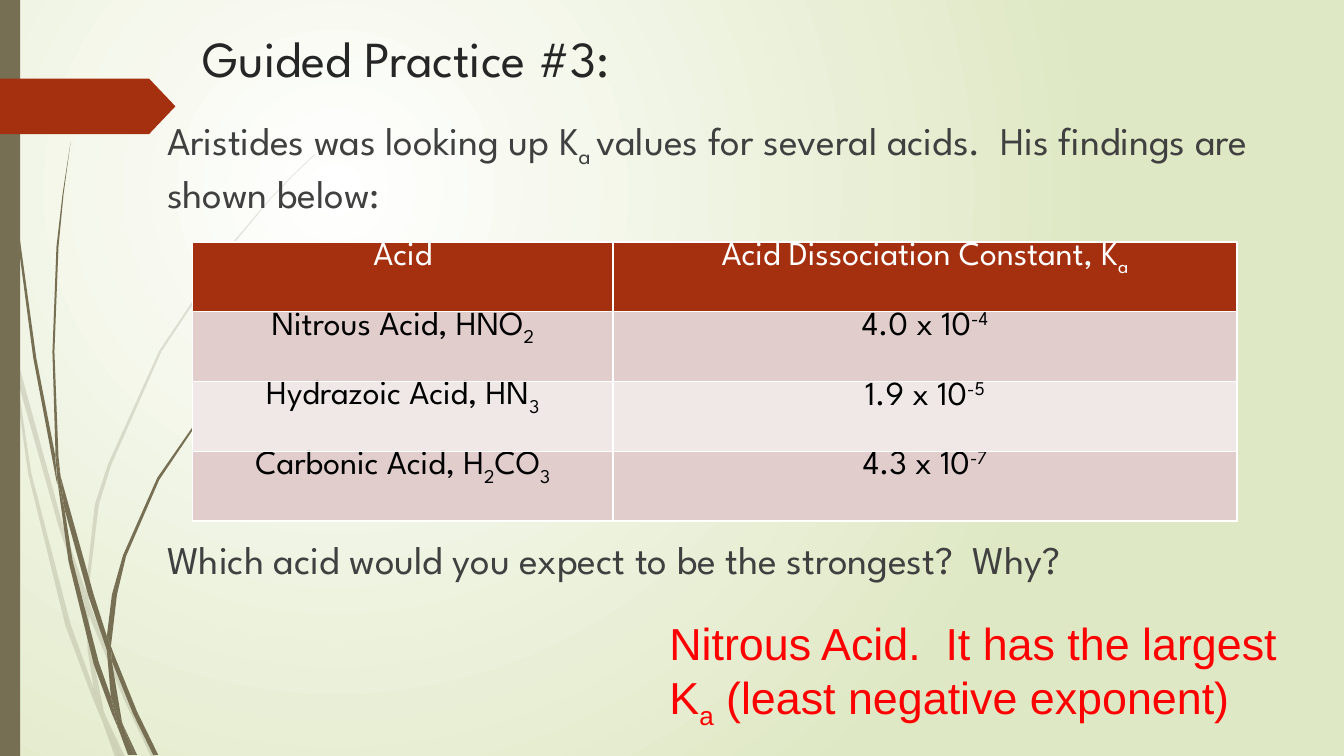
from lxml.etree import SubElement
from pptx import Presentation
from pptx.dml.color import RGBColor
from pptx.enum.shapes import MSO_SHAPE as Preset
from pptx.enum.text import MSO_ANCHOR as Anchor, PP_ALIGN as Align
from pptx.oxml.ns import qn
from pptx.util import Inches, Pt

WHITE = RGBColor(0xFF, 0xFF, 0xFF)
BLACK = RGBColor(0, 0, 0)
RED = RGBColor(0xFF, 0, 0)
PALE_GREEN = RGBColor(0xDF, 0xE8, 0xC4)
OLIVE = RGBColor(0x76, 0x6F, 0x54)
RUST = RGBColor(0xA5, 0x30, 0x10)
TITLE_INK = RGBColor(0x26, 0x26, 0x26)
BODY_INK = RGBColor(0x40, 0x40, 0x40)
ROW_FILLS = (RGBColor(0xF0, 0xE8, 0xE7), RGBColor(0xE1, 0xCD, 0xCC))

SPARTAN = "League Spartan"
SUB, SUPER = -25000, 30000

FAINT_STRANDS = (
    ((0.11, 3.5), (0.09, 3.22), (0, 2.82), (0, 2.99), (0.1, 3.44)),
    ((0.58, 5.22), (0.84, 5.99), (0.85, 5.86), (0.62, 5.2), (0.14, 3.45), (0.17, 3.76)),
    ((0.92, 6.07), (0.88, 5.96), (0.88, 6.1), (1.23, 6.94), (1.5, 7.51), (1.55, 7.51),
     (1.27, 6.92)),
    ((1.19, 7.51), (1.24, 7.51), (1.05, 7.11)),
    ((0.93, 6.83), (0.7, 6.19), (0.31, 4.69), (0.17, 3.76), (0.11, 3.5), (0.28, 4.7),
     (0.65, 6.21), (0.92, 6.93), (1.01, 7.14), (0.99, 7.07)),
    ((0.84, 5.99), (0.87, 6.46), (0.93, 6.83), (0.96, 6.92), (1.05, 7.11), (1.03, 7.06),
     (0.91, 6.46), (0.88, 6.1), (0.88, 6.08)),
    ((0.88, 5.84), (0.98, 5.01), (1.1, 4.62), (1.6, 3.49), (2.29, 2.45), (2.68, 1.98),
     (2.9, 1.75), (3.12, 1.54), (3.12, 1.53), (2.89, 1.75), (2.68, 1.97), (2.28, 2.44),
     (1.58, 3.48), (1.07, 4.61), (0.94, 5.01), (0.85, 5.84), (0.85, 5.86), (0.88, 5.96)),
    ((1.01, 7.14), (1.14, 7.51), (1.19, 7.51)),
    ((0.88, 6.08), (0.88, 5.96), (0.85, 5.86), (0.84, 5.99)),
    ((0.96, 6.92), (0.93, 6.83), (0.99, 7.07), (1.01, 7.14), (1.19, 7.51), (1.05, 7.11)),
)
DARK_STRANDS = (
    ((0.07, 1.1), (0.17, 2.33), (0.33, 3.55), (0.56, 4.77), (0.57, 4.81), (0.55, 4.57),
     (0.55, 4.53), (0.36, 3.55), (0.19, 2.32), (0.08, 1.09), (0.05, 0.48), (0.04, 0),
     (0.03, 0), (0.04, 0.48)),
    ((0.88, 5.92), (1.06, 6.45), (1.06, 6.31), (0.93, 5.9), (0.6, 4.72), (0.64, 5.05)),
    ((1.13, 6.49), (1.1, 6.41), (1.11, 6.56), (1.32, 7.08), (1.52, 7.49), (1.57, 7.49),
     (1.36, 7.06)),
    ((1.1, 6.91), (0.98, 6.57), (0.72, 5.56), (0.64, 5.05), (0.57, 4.77), (0.68, 5.57),
     (0.93, 6.59), (1.11, 7.08), (1.17, 7.22), (1.16, 7.17)),
    ((0.6, 4.72), (0.58, 4.53), (0.54, 3.49), (0.58, 2.45), (0.63, 1.93), (0.7, 1.41),
     (0.62, 1.93), (0.56, 2.45), (0.52, 3.49), (0.55, 4.49)),
    ((1.33, 7.49), (1.36, 7.49), (1.22, 7.19)),
    ((0.57, 4.77), (0.64, 5.05), (0.6, 4.72), (0.55, 4.49), (0.55, 4.53)),
    ((1.11, 6.33), (1.16, 5.9), (1.25, 5.52), (1.58, 4.76), (2.05, 4.06), (2.31, 3.74),
     (2.61, 3.44), (2.6, 3.44), (2.31, 3.73), (2.04, 4.05), (1.56, 4.74), (1.22, 5.51),
     (1.11, 5.9), (1.06, 6.31), (1.1, 6.41)),
    ((1.17, 7.22), (1.27, 7.49), (1.31, 7.49)),
    ((1.06, 6.45), (1.1, 6.91), (1.16, 7.06), (1.22, 7.19), (1.21, 7.16), (1.11, 6.56)),
    ((1.06, 6.45), (1.11, 6.56), (1.1, 6.41), (1.06, 6.31)),
    ((1.16, 7.06), (1.1, 6.91), (1.16, 7.17), (1.17, 7.22), (1.3, 7.49), (1.33, 7.49),
     (1.22, 7.19)),
)
ARROW_TAG = ((1, 0.5), (0.85, 1), (0, 1), (0, 0), (0.85, 0))

ACIDS = (
    ([("Acid", 0)], [("Acid Dissociation Constant, K", 0), ("a", SUB)]),
    ([("Nitrous Acid, HNO", 0), ("2", SUB)], [("4.0 x 10", 0), ("-4", SUPER)]),
    ([("Hydrazoic Acid, HN", 0), ("3", SUB)], [("1.9 x 10", 0), ("-5", SUPER)]),
    ([("Carbonic Acid, H", 0), ("2", SUB), ("CO", 0), ("3", SUB)],
     [("4.3 x 10", 0), ("-7", SUPER)]),
)
QUESTION = (
    [("Aristides was looking up K", 0), ("a ", SUB),
     ("values for several acids.  His findings are shown below:", 0)],
    [("Which acid would you expect to be the strongest?  Why?", 0)],
)
ANSWER = ([("Nitrous Acid.  It has the largest K", 0), ("a", SUB),
           (" (least negative exponent)", 0)],)


def write_runs(paragraph, pieces, font_name, size, color):
    for words, baseline in pieces:
        run = paragraph.add_run()
        run.text = words
        run.font.name = font_name
        run.font.size = Pt(size)
        run.font.bold = False
        run.font.color.rgb = color
        if baseline:
            run.font._element.set("baseline", str(baseline))


def paint(shape, color, alpha=None):
    shape.shadow.inherit = False
    shape.fill.solid()
    shape.fill.fore_color.rgb = color
    shape.line.fill.background()
    if alpha:
        tint = shape._element.spPr.find(f".//{qn('a:srgbClr')}")
        SubElement(tint, qn("a:alpha"), val=str(alpha * 1000))


def add_outline(slide, points, color, alpha=None):
    corners = [(Inches(x), Inches(y)) for x, y in points]
    builder = slide.shapes.build_freeform(*corners[0])
    builder.add_line_segments(corners[1:], close=True)
    paint(builder.convert_to_shape(), color, alpha)


def add_background(slide):
    fill = slide.background.fill
    fill.gradient()
    for stop, color in zip(fill.gradient_stops, (WHITE, PALE_GREEN)):
        stop.color.rgb = color
    gradient = slide.element.find(f".//{qn('a:gradFill')}")
    gradient.remove(gradient.find(qn("a:lin")))
    circle = SubElement(gradient, qn("a:path"), path="circle")
    SubElement(circle, qn("a:fillToRect"), l="50000", t="50000", r="100000", b="100000")


def add_side_decoration(slide, left, top, width, height):
    for strands, alpha in ((FAINT_STRANDS, 20), (DARK_STRANDS, None)):
        for strand in strands:
            add_outline(slide, [(left + x, top + y) for x, y in strand], OLIVE, alpha)
    band = slide.shapes.add_shape(
        Preset.RECTANGLE, Inches(left), Inches(top), Inches(width), Inches(height))
    paint(band, OLIVE)


def add_arrow_tag(slide, left, top, width, height):
    points = [(left + x * width, top + y * height) for x, y in ARROW_TAG]
    add_outline(slide, points, RUST)


def add_text(slide, box, paragraphs, font_name, size, color, gap=0):
    frame = slide.shapes.add_textbox(*map(Inches, box)).text_frame
    frame.word_wrap = True
    for index, pieces in enumerate(paragraphs):
        paragraph = frame.add_paragraph() if index else frame.paragraphs[0]
        if index:
            paragraph.space_before = Pt(gap)
        write_runs(paragraph, pieces, font_name, size, color)


def add_acid_table(slide, box, column_widths):
    table = slide.shapes.add_table(
        len(ACIDS), len(column_widths), *map(Inches, box)).table
    for column, width in zip(table.columns, column_widths):
        column.width = Inches(width)
    for row, entries in enumerate(ACIDS):
        for column, pieces in enumerate(entries):
            cell = table.cell(row, column)
            cell.fill.solid()
            cell.fill.fore_color.rgb = ROW_FILLS[row % 2] if row else RUST
            cell.vertical_anchor = Anchor.TOP
            cell.margin_top = cell.margin_bottom = 0
            paragraph = cell.text_frame.paragraphs[0]
            paragraph.alignment = Align.CENTER
            write_runs(paragraph, pieces, SPARTAN, 24, BLACK if row else WHITE)


def main():
    deck = Presentation()
    deck.slide_width, deck.slide_height = Inches(13.33), Inches(7.5)
    slide = deck.slides.add_slide(deck.slide_layouts[6])
    add_background(slide)
    add_side_decoration(slide, 0, 0, 0.2, 7.5)
    add_arrow_tag(slide, 0, 0.78, 1.74, 0.55)
    add_text(slide, (1.91, 0.22, 9.75, 1.4), ([("Guided Practice #3:", 0)],),
             SPARTAN, 36, TITLE_INK)
    add_text(slide, (1.56, 1.1, 11.77, 4.83), QUESTION, SPARTAN, 28, BODY_INK, 228)
    add_text(slide, (6.54, 6.06, 6.79, 1.18), ANSWER, "Arial", 32, RED)
    add_acid_table(slide, (1.91, 2.4, 10.36, 2.77), (4.17, 6.19))
    deck.save("out.pptx")


if __name__ == "__main__":
    main()
